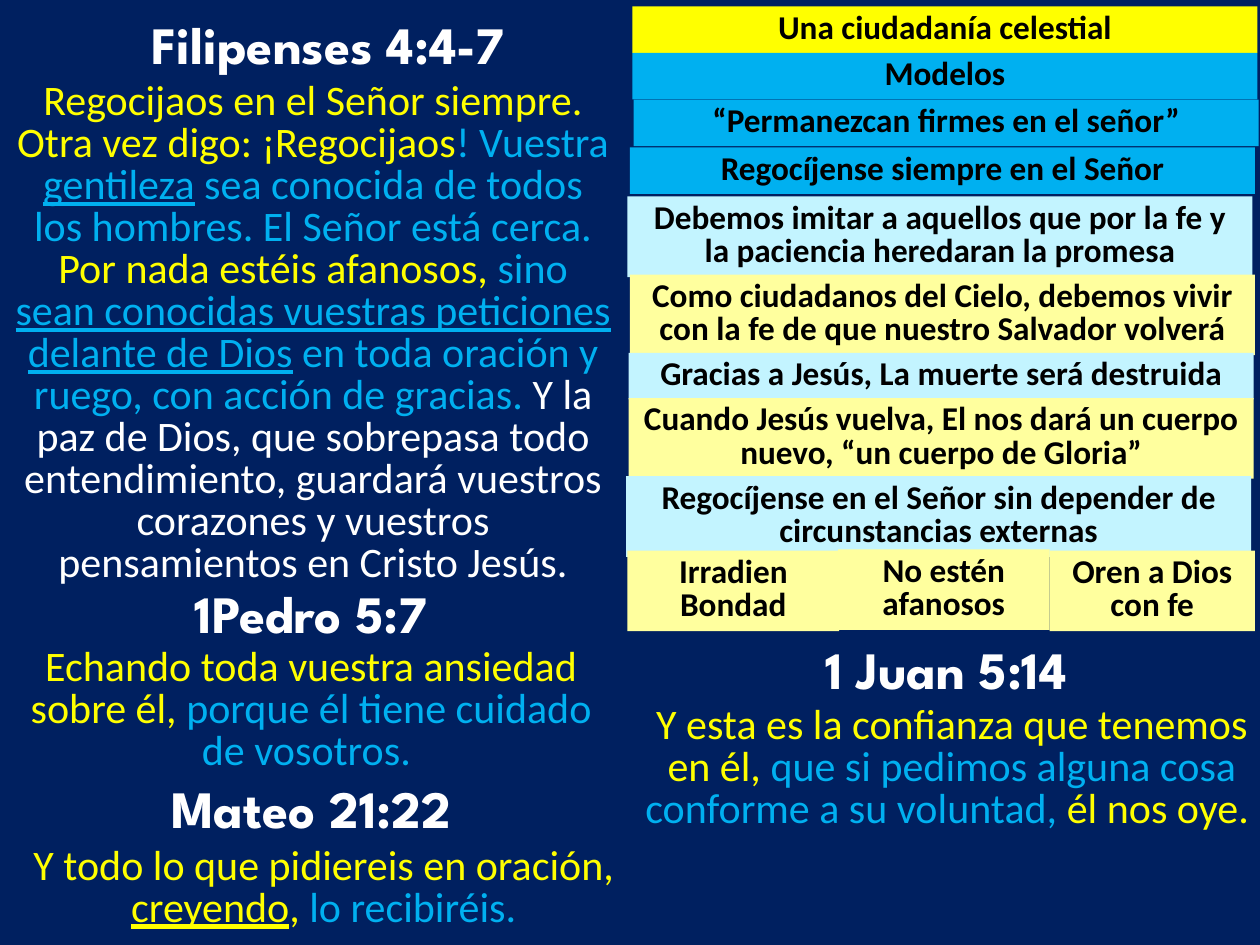
from pptx import Presentation
from pptx.dml.color import RGBColor
from pptx.enum.shapes import MSO_SHAPE as Shape
from pptx.enum.text import MSO_ANCHOR as Anchor, MSO_AUTO_SIZE as Fit, PP_ALIGN as Align
from pptx.util import Inches, Pt

NAVY, WHITE, BLACK = "002060", "FFFFFF", "000000"
YELLOW, BLUE = "FFFF00", "00B0F0"
PALE, CREAM = "C3F4FF", "FFFF9E"
ROW_W, ONE, TWO = 4.96, 0.37, 0.64  # row width, heights of one and two lines

ROWS = [  # left, top, height, fill, text
    (5.02, 0.05, ONE, YELLOW, "Una ciudadanía celestial"),
    (5.02, 0.42, ONE, BLUE, "Modelos"),
    (5.03, 0.79, ONE, BLUE, "“Permanezcan firmes en el señor”"),
    (5, 1.17, ONE, BLUE, "Regocíjense siempre en el Señor"),
    (4.98, 1.56, TWO, PALE,
     "Debemos imitar a aquellos que por la fe y la paciencia heredaran la promesa"),
    (5, 2.18, TWO, CREAM,
     "Como ciudadanos del Cielo, debemos vivir con la fe de que nuestro Salvador volverá"),
    (4.99, 2.8, ONE, PALE, "Gracias a Jesús, La muerte será destruida"),
    (4.99, 3.16, TWO, CREAM,
     "Cuando Jesús vuelva, El nos dará un cuerpo nuevo, “un cuerpo de Gloria”"),
    (4.97, 3.78, TWO, PALE,
     "Regocíjense en el Señor sin depender de circunstancias externas"),
]

CELLS = [  # left, top, width, text
    (4.98, 4.37, 1.68, "Irradien Bondad"),
    (6.65, 4.36, 1.68, "No estén afanosos"),
    (8.33, 4.37, 1.63, "Oren a Dios con fe"),
]

TITLES = [  # left, top, width, text
    (0.28, 0.05, 4.65, "Filipenses 4:4-7"),
    (0.35, 4.56, 4.24, "1Pedro 5:7"),
    (5.39, 5.01, 4.24, "1 Juan 5:14"),
    (0.35, 6.11, 4.24, "Mateo 21:22"),
]

VERSES = [  # box, then runs of text, colour and, where underlined, True
    ((0.02, 0.6, 4.93, 4.14), [
        ("Regocijaos en el Señor siempre. Otra vez digo: ¡Regocijaos", YELLOW),
        ("! Vuestra ", BLUE),
        ("gentileza", BLUE, True),
        (" sea conocida de todos los hombres. El Señor está cerca. ", BLUE),
        ("Por nada estéis afanosos, ", YELLOW),
        ("sino ", BLUE),
        ("sean conocidas vuestras peticiones delante de Dios", BLUE, True),
        (" en toda oración y ruego, con acción de gracias. ", BLUE),
        ("Y la paz de Dios, que sobrepasa todo entendimiento, guardará vuestros "
         "corazones y vuestros pensamientos en Cristo Jesús.", WHITE),
    ]),
    ((0.02, 5.09, 4.9, 1.12), [
        ("Echando toda vuestra ansiedad sobre él, ", YELLOW),
        ("porque él tiene cuidado de vosotros. ", BLUE),
    ]),
    ((4.99, 5.55, 5.13, 1.12), [
        ("Y esta es la confianza que tenemos en él, ", YELLOW),
        ("que si pedimos alguna cosa conforme a su voluntad, ", BLUE),
        ("él nos oye. ", YELLOW),
    ]),
    ((0.12, 6.67, 4.9, 0.78), [
        ("Y todo lo que pidiereis en oración, ", YELLOW),
        ("creyendo", YELLOW, True),
        (", ", YELLOW),
        ("lo recibiréis.", BLUE),
    ]),
]


def paint(fill, color):
    fill.solid()
    fill.fore_color.rgb = RGBColor.from_string(color)


def write(shape, runs, size, face="Calibri", bold=None, pitch=None):
    """Fill the shape with one centred paragraph; pitch is its line height."""
    frame = shape.text_frame
    frame.word_wrap = True
    frame.auto_size = Fit.SHAPE_TO_FIT_TEXT
    frame.vertical_anchor = Anchor.TOP
    para = frame.paragraphs[0]
    para.alignment = Align.CENTER
    if pitch:
        para.line_spacing = Pt(pitch)
    for text, color, *line in runs:
        run = para.add_run()
        run.text = text
        font = run.font
        font.name, font.size, font.bold = face, Pt(size), bold
        font.color.rgb = RGBColor.from_string(color)
        if line:
            font.underline = True


def add_band(slide, box, color, text):
    band = slide.shapes.add_shape(Shape.RECTANGLE, *map(Inches, box))
    band.shadow.inherit = False
    paint(band.fill, color)
    band.line.fill.background()
    write(band, [(text, BLACK)], 19, bold=True, pitch=19)


def add_title(slide, box, text):
    title = slide.shapes.add_textbox(*map(Inches, box))
    write(title, [(text, WHITE)], 30, "League Spartan", bold=True)


def add_verse(slide, box, runs):
    verse = slide.shapes.add_textbox(*map(Inches, box))
    write(verse, runs, 24, pitch=24)


def main():
    deck = Presentation()
    deck.slide_width, deck.slide_height = Inches(10), Inches(7.5)
    slide = deck.slides.add_slide(deck.slide_layouts[6])
    paint(slide.background.fill, NAVY)
    for left, top, height, color, text in ROWS:
        add_band(slide, (left, top, ROW_W, height), color, text)
    for left, top, width, text in CELLS:
        add_band(slide, (left, top, width, TWO), CREAM, text)
    for left, top, width, text in TITLES:
        add_title(slide, (left, top, width, 0.61), text)
    for box, runs in VERSES:
        add_verse(slide, box, runs)
    deck.save("out.pptx")


if __name__ == "__main__":
    main()
